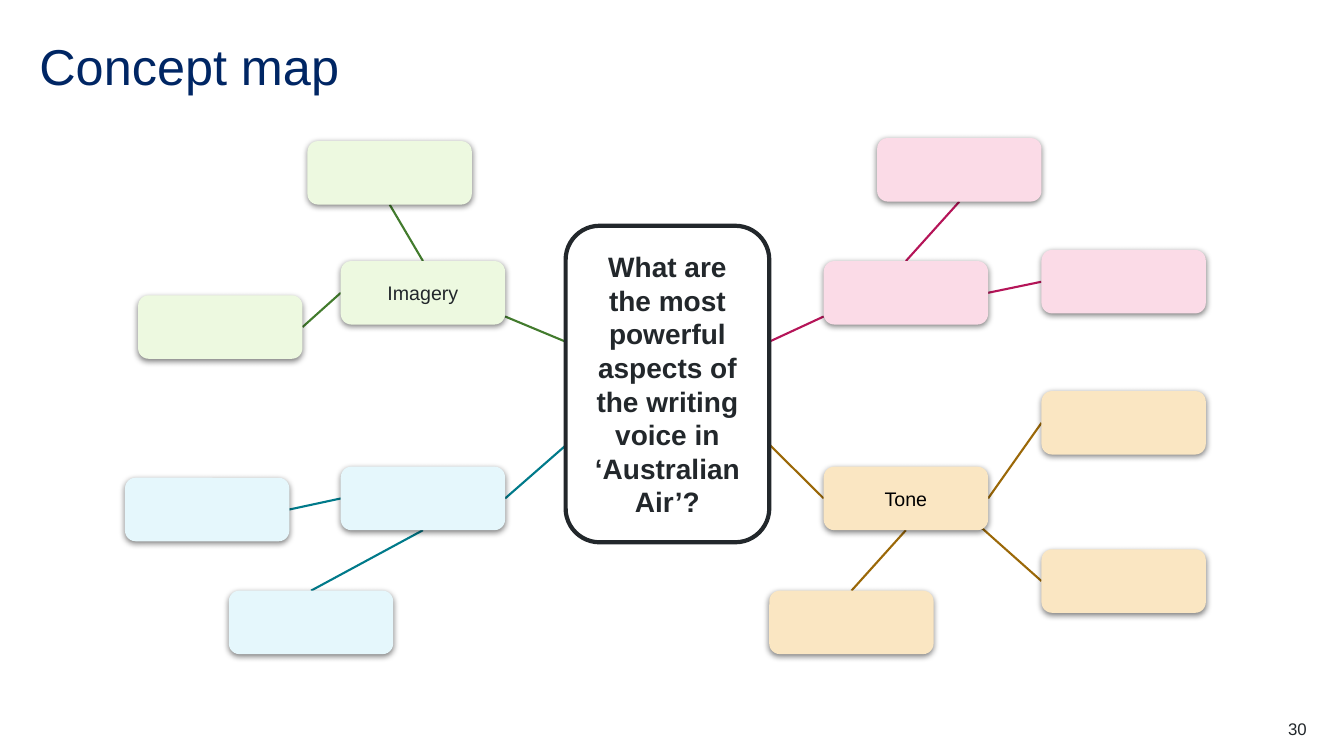
from lxml import etree
from pptx import Presentation
from pptx.dml.color import RGBColor
from pptx.enum import shapes, text
from pptx.oxml import ns
from pptx.util import Inches, Pt

COLORS = {
    "title": "002664", "ink": "22272B", "black": "000000", "white": "FFFFFF",
    "green": "EDF9E0", "green line": "427B2D",
    "pink": "FBDBE7", "pink line": "B51458",
    "blue": "E5F7FC", "blue line": "007A8A",
    "orange": "FAE6C2", "orange line": "9B6808",
}
FONT = "Arial"
NODE_W, NODE_H = 1.63, 0.63
TOP, LEFT, BOTTOM, RIGHT = range(4)


def rgb(name):
    return RGBColor.from_string(COLORS[name])


def write(tf, words, size, color, align, bold=False):
    tf.text = words
    tf.word_wrap = True
    tf.auto_size = text.MSO_AUTO_SIZE.NONE
    tf.vertical_anchor = text.MSO_ANCHOR.MIDDLE
    p = tf.paragraphs[0]
    p.alignment = align
    r = p.runs[0]
    r.font.name, r.font.size, r.font.bold = FONT, Pt(size), bold
    r.font.color.rgb = rgb(color)


def clear_insets(tf):
    tf.margin_left = tf.margin_right = tf.margin_top = tf.margin_bottom = 0


def add_shadow(sp):
    effects = etree.SubElement(sp._element.spPr, ns.qn("a:effectLst"))
    shadow = etree.SubElement(effects, ns.qn("a:outerShdw"), blurRad=str(Pt(4.5)),
                              dist=str(Pt(1.5)), dir="5400000", rotWithShape="0")
    color = etree.SubElement(shadow, ns.qn("a:srgbClr"), val=COLORS["black"])
    etree.SubElement(color, ns.qn("a:alpha"), val="50000")


def add_box(s, x, y, w, h, fill):
    sp = s.shapes.add_shape(shapes.MSO_SHAPE.ROUNDED_RECTANGLE,
                            Inches(x), Inches(y), Inches(w), Inches(h))
    sp.fill.solid()
    sp.fill.fore_color.rgb = rgb(fill)
    tf = sp.text_frame
    tf.margin_left = tf.margin_right = Inches(0.09)
    tf.margin_top = tf.margin_bottom = Inches(0.04)
    return sp


def add_node(s, x, y, hue):
    sp = add_box(s, x, y, NODE_W, NODE_H, hue)
    sp.line.fill.background()
    add_shadow(sp)
    return sp


def add_link(s, hue, start, end):
    line = s.shapes.add_connector(shapes.MSO_CONNECTOR.STRAIGHT, 0, 0, 0, 0)
    line.begin_x, line.begin_y = (Inches(v) for v in start)
    line.end_x, line.end_y = (Inches(v) for v in end)
    line.line.color.rgb = rgb(hue + " line")
    line.line.width = Pt(1.5)
    etree.SubElement(line._element.spPr, ns.qn("a:effectLst"))
    s.shapes._spTree.insert(2, line._element)
    return line


def add_title(s, x, y, w, h):
    sp = s.shapes.title
    sp.left, sp.top, sp.width, sp.height = (Inches(v) for v in (x, y, w, h))
    write(sp.text_frame, "Concept map", 36, "title", text.PP_ALIGN.LEFT)
    clear_insets(sp.text_frame)
    sp.text_frame.paragraphs[0].line_spacing = 0.9


def add_question(s, x, y, w, h):
    sp = add_box(s, x, y, w, h, "white")
    sp.shadow.inherit = False
    sp.line.color.rgb = rgb("ink")
    sp.line.width = Pt(3)
    write(sp.text_frame,
          "What are the most powerful aspects of the writing voice in ‘Australian Air’?",
          20, "ink", text.PP_ALIGN.CENTER, bold=True)


def add_branch(s, x, y, hue, hub, joint, leaves, label=None, color="ink"):
    topic = add_node(s, x, y, hue)
    if label:
        write(topic.text_frame, label, 14, color, text.PP_ALIGN.CENTER)
    stem = add_link(s, hue, hub, (x, y))
    if isinstance(joint, tuple):
        stem.end_x, stem.end_y = Inches(x + joint[0]), Inches(y + joint[1])
    else:
        stem.end_connect(topic, joint)
    for dx, dy, side in leaves:
        leaf = add_node(s, x + dx, y + dy, hue)
        if side is None:
            corner = (x + NODE_W - 0.06, y + NODE_H - 0.02)
            link = add_link(s, hue, corner, (x + dx, y + dy))
            link.end_connect(leaf, LEFT)
        else:
            link = add_link(s, hue, (x, y), (x + dx, y + dy))
            link.begin_connect(topic, side)
            link.end_connect(leaf, (side + 2) % 4)


def add_map(s, x, y, w, h):
    left, right = x + 2.14, x + 6.93
    upper, lower = y + 1.22, y + 3.26
    hub_x, hub_y, hub_w, hub_h = x + 4.37, y + 0.87, 2.02, 3.14
    hub_r = hub_x + hub_w
    add_branch(s, left, upper, "green", (hub_x, hub_y + 1.15), (NODE_W, 0.55),
               [(-0.33, -1.19, TOP), (-2.01, 0.34, LEFT)], "Imagery")
    add_branch(s, right, upper, "pink", (hub_r, hub_y + 1.15), (0, 0.55),
               [(0.53, -1.22, TOP), (2.16, -0.11, RIGHT)])
    add_branch(s, left, lower, "blue", (hub_x, hub_y + 2.18), RIGHT,
               [(-2.14, 0.11, LEFT), (-1.11, 1.23, BOTTOM)])
    add_branch(s, right, lower, "orange", (hub_r, hub_y + 2.17), LEFT,
               [(2.16, -0.75, RIGHT), (2.16, 0.82, None), (-0.54, 1.23, BOTTOM)],
               "Tone", "black")
    add_question(s, hub_x, hub_y, hub_w, hub_h)


def add_page_number(s, x, y, w, h):
    sp = s.shapes.add_textbox(Inches(x), Inches(y), Inches(w), Inches(h))
    write(sp.text_frame, "30", 12, "ink", text.PP_ALIGN.RIGHT)
    clear_insets(sp.text_frame)


def main():
    prs = Presentation()
    prs.slide_width, prs.slide_height = Inches(13.33), Inches(7.5)
    s = prs.slides.add_slide(prs.slide_layouts[5])
    add_title(s, 0.39, 0.39, 12.56, 0.6)
    add_map(s, 1.24, 1.37, 10.72, 5.12)
    add_page_number(s, 12.17, 7.13, 0.79, 0.2)
    prs.save("out.pptx")


if __name__ == "__main__":
    main()
